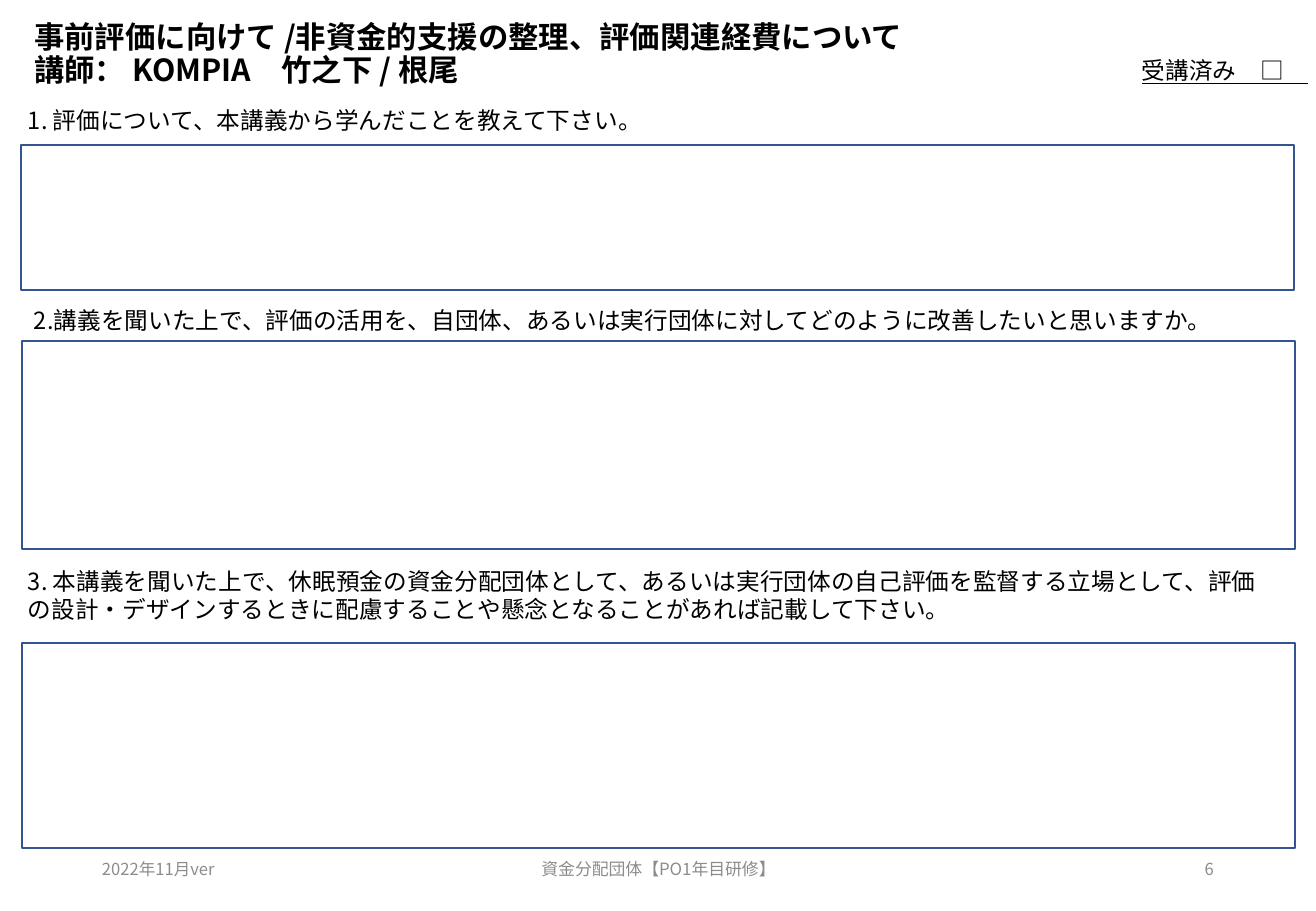
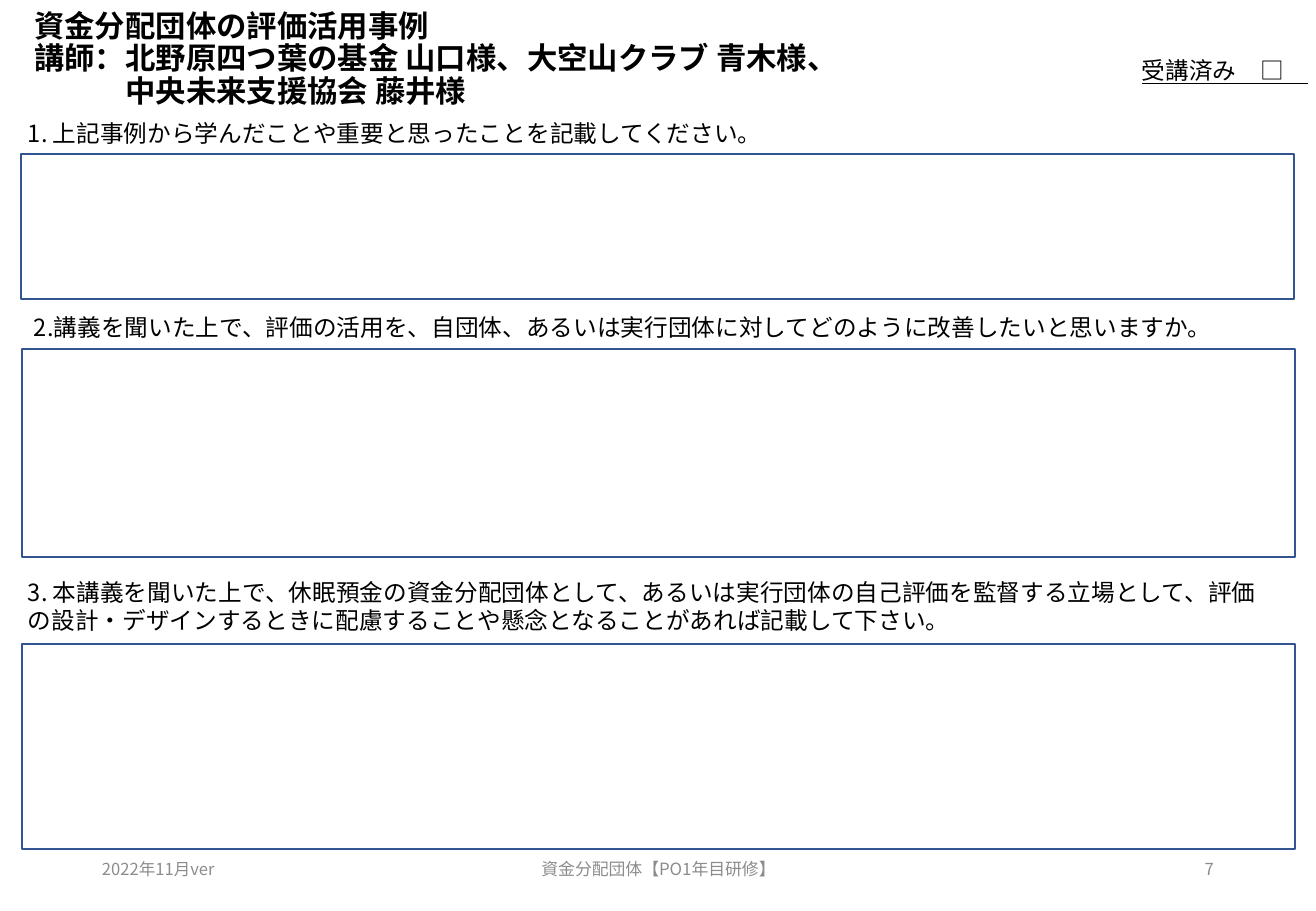
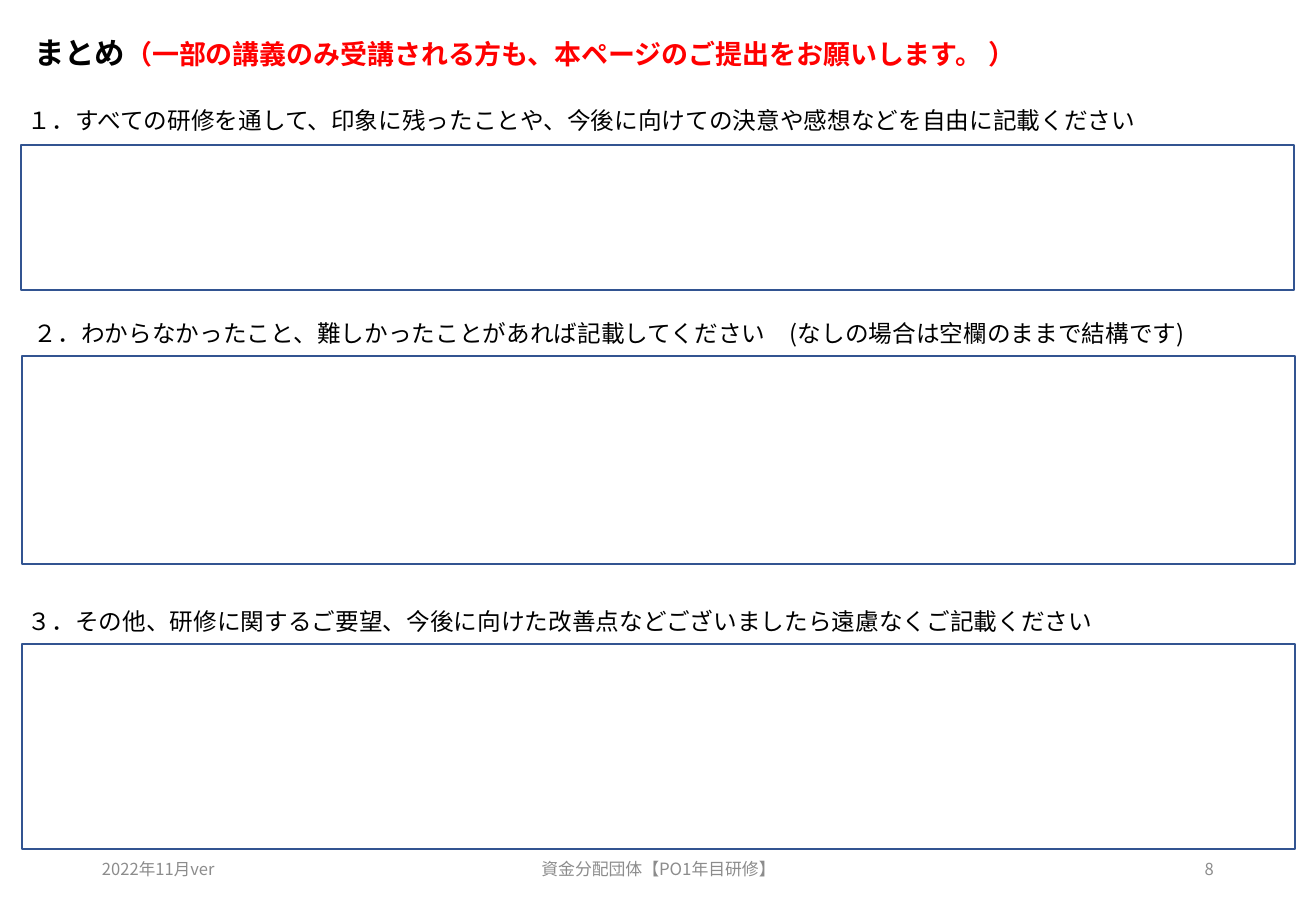
"""Build three training worksheet slides with questions and answer boxes."""
from dataclasses import dataclass

from lxml import etree
from pptx import Presentation
from pptx.dml.color import RGBColor
from pptx.enum.shapes import MSO_SHAPE
from pptx.enum.text import MSO_ANCHOR, MSO_AUTO_SIZE, PP_ALIGN
from pptx.oxml.ns import qn
from pptx.util import Pt

RECT = MSO_SHAPE.RECTANGLE
TOP, MID = MSO_ANCHOR.TOP, MSO_ANCHOR.MIDDLE
LEFT, CENTER, RIGHT = PP_ALIGN.LEFT, PP_ALIGN.CENTER, PP_ALIGN.RIGHT
FIXED = MSO_AUTO_SIZE.NONE
PX = 7526
WIDE, HIGH = 1316, 911


@dataclass(frozen=True)
class Style:
    size: float
    color: str
    bold: bool = False
    under: bool = False


@dataclass(frozen=True)
class Theme:
    font: str = "Noto Sans CJK JP"
    fill: str = "FFFFFF"
    edge: str = "325491"
    title: Style = Style(18, "000000", bold=True)
    alert: Style = Style(16, "FF0000", bold=True)
    body: Style = Style(14, "000000")
    check: Style = Style(14, "000000", under=True)
    foot: Style = Style(10, "8C8C8C")
    small: Style = Style(9.8, "8C8C8C")


THEME = Theme()
FIRST = 6
INDENT = 3
ANSWERS = [(21, 145), (22, 208), (22, 205)]
PROMPTS = [(16, 1262), (22, 1273), (16, 1273)]
FOOT = [
    (90, 296, LEFT, THEME.small, "2022年11月ver"),
    (436, 445, CENTER, THEME.foot, "資金分配団体【PO1年目研修】"),
    (930, 296, RIGHT, THEME.small, "{page}"),
]
CHECK = "受講済み　□　"
IMPROVE = "2.講義を聞いた上で、評価の活用を、自団体、あるいは実行団体に対してどのように改善したいと思いますか。"
DESIGN = (
    "3. 本講義を聞いた上で、休眠預金の資金分配団体として、あるいは実行団体の自己評価を監督する立場として、"
    "評価の設計・デザインするときに配慮することや懸念となることがあれば記載して下さい。"
)
SHEETS = [
    {
        "top": -5,
        "title": [
            (0, [("事前評価に向けて /非資金的支援の整理、評価関連経費について", THEME.title)]),
            (0, [("講師： KOMPIA　竹之下 / 根尾", THEME.title)]),
        ],
        "check": True,
        "items": [
            (100, 145, "1. 評価について、本講義から学んだことを教えて下さい。"),
            (300, 341, IMPROVE),
            (561, 643, DESIGN),
        ],
    },
    {
        "top": 0,
        "title": [
            (0, [("資金分配団体の評価活用事例", THEME.title)]),
            (0, [("講師：北野原四つ葉の基金 山口様、大空山クラブ 青木様、", THEME.title)]),
            (INDENT, [("中央未来支援協会 藤井様", THEME.title)]),
        ],
        "check": True,
        "items": [
            (113, 154, "1. 上記事例から学んだことや重要と思ったことを記載してください。"),
            (307, 349, IMPROVE),
            (572, 644, DESIGN),
        ],
    },
    {
        "top": -5,
        "title": [
            (0, [
                ("まとめ", THEME.title),
                ("（一部の講義のみ受講される方も、本ページのご提出をお願いします。 ）", THEME.alert),
            ]),
        ],
        "check": False,
        "items": [
            (100, 145, "１．すべての研修を通して、印象に残ったことや、今後に向けての決意や感想などを自由に記載ください"),
            (313, 356, "２．わからなかったこと、難しかったことがあれば記載してください　(なしの場合は空欄のままで結構です)"),
            (601, 644, "３．その他、研修に関するご要望、今後に向けた改善点などございましたら遠慮なくご記載ください"),
        ],
    },
]


def area(*sides):
    return [side * PX for side in sides]


def add_run(para, text, style):
    run = para.add_run()
    run.text = text
    font = run.font
    font.size, font.bold, font.underline = Pt(style.size), style.bold, style.under
    font.color.rgb = RGBColor.from_string(style.color)
    font.name = THEME.font
    east = etree.SubElement(run._r.get_or_add_rPr(), qn("a:ea"))
    east.set("typeface", THEME.font)


def set_frame(frame, anchor):
    frame.word_wrap = True
    frame.auto_size = FIXED
    frame.vertical_anchor = anchor


def add_label(slide, box, text, style, align=LEFT, anchor=TOP):
    frame = slide.shapes.add_textbox(*area(*box)).text_frame
    set_frame(frame, anchor)
    para = frame.paragraphs[0]
    para.alignment = align
    add_run(para, text, style)
    return frame


def set_title(slide, top, lines):
    title = slide.shapes.title
    title.left, title.top, title.width, title.height = area(22, top, 1205, 120)
    frame = title.text_frame
    set_frame(frame, MID)
    for num, (ems, runs) in enumerate(lines):
        para = frame.add_paragraph() if num else frame.paragraphs[0]
        para.alignment = LEFT
        para.line_spacing = 0.9
        if ems:
            props = para._p.get_or_add_pPr()
            props.set("marL", str(Pt(ems * THEME.title.size)))
            props.set("indent", "0")
        for text, style in runs:
            add_run(para, text, style)


def add_answer(slide, left, top, high):
    box = slide.shapes.add_shape(RECT, *area(left, top, 1273, high))
    box.shadow.inherit = False
    box.fill.solid()
    box.fill.fore_color.rgb = RGBColor.from_string(THEME.fill)
    box.line.color.rgb = RGBColor.from_string(THEME.edge)
    box.line.width = Pt(1)


def add_sheet(deck, page, sheet):
    slide = deck.slides.add_slide(deck.slide_layouts[5])
    set_title(slide, sheet["top"], sheet["title"])
    for item, prompt, answer in zip(sheet["items"], PROMPTS, ANSWERS):
        ask, top, text = item
        left, wide = prompt
        add_answer(slide, answer[0], top, answer[1])
        add_label(slide, (left, ask, wide, top - ask), text, THEME.body)
    if sheet["check"]:
        frame = add_label(slide, (1130, 50, 186, 41), CHECK, THEME.check)
        frame.margin_right = 0
    for left, wide, align, style, text in FOOT:
        add_label(slide, (left, 844, wide, 49), text.format(page=page), style, align, MID)


def main():
    deck = Presentation()
    deck.slide_width, deck.slide_height = area(WIDE, HIGH)
    for page, sheet in enumerate(SHEETS, FIRST):
        add_sheet(deck, page, sheet)
    deck.save("out.pptx")


if __name__ == "__main__":
    main()
